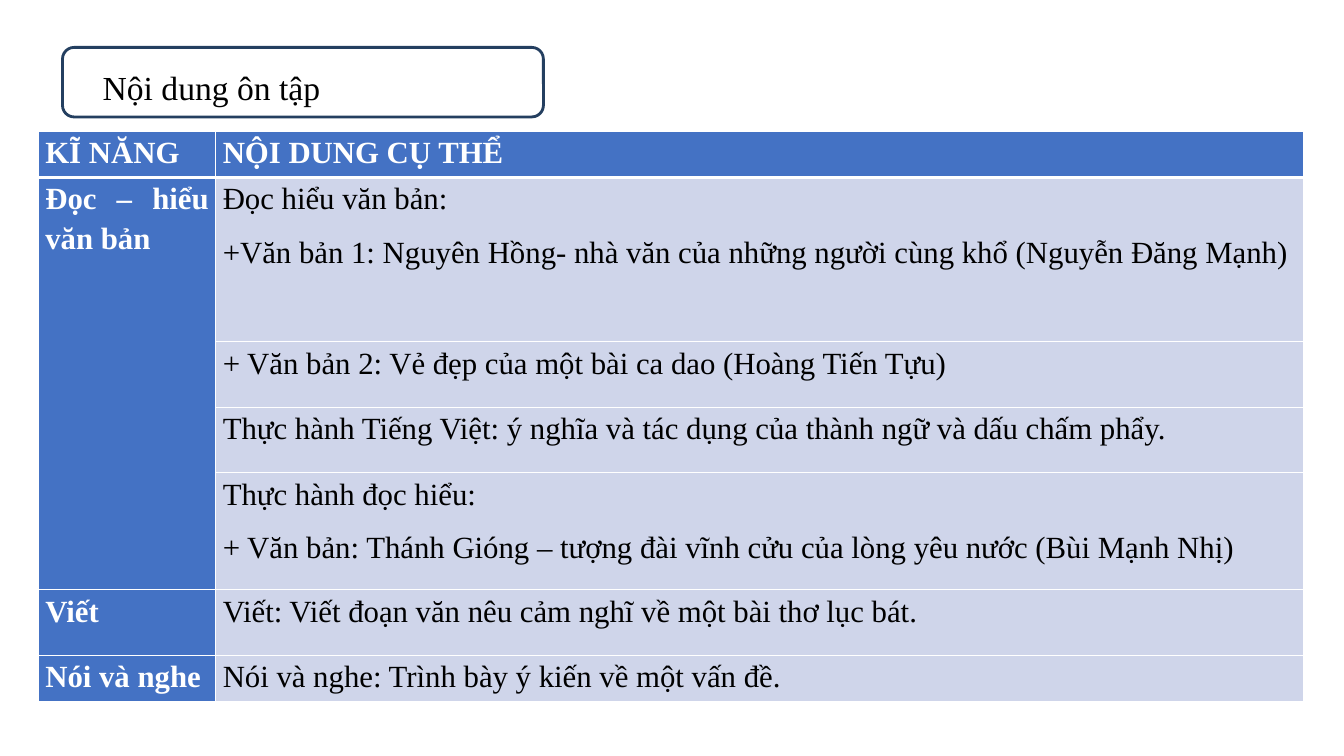
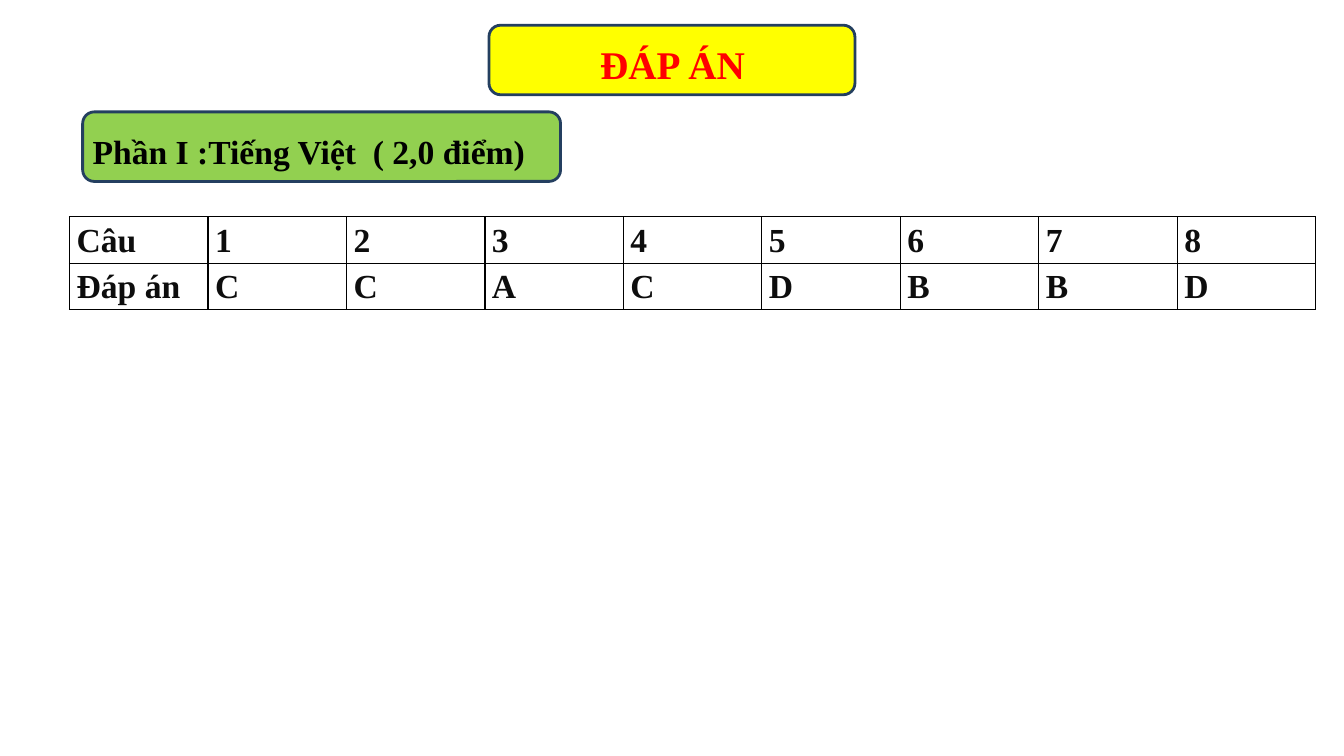
import pptx
import pptx.dml.color
import pptx.enum.shapes
import pptx.enum.text
import pptx.oxml
import pptx.oxml.ns
import pptx.util

Inches = pptx.util.Inches
ALIGN = pptx.enum.text.PP_ALIGN

FONT = "Times New Roman"
COLORS = {
    "black": "000000", "white": "FFFFFF", "ink": "0D0D0D", "red": "FF0000",
    "yellow": "FFFF00", "green": "92D050", "outline": "243F60",
    "blue": "4472C4", "pale": "CFD5EA",
}
SPACED = {"line_spacing": 1.15, "space_after": pptx.util.Pt(10)}
JUSTIFIED = {"alignment": ALIGN.JUSTIFY, **SPACED}
CENTERED = {"alignment": ALIGN.CENTER, **SPACED}
CELL = {
    "margin_left": Inches(0.07), "margin_right": Inches(0.07),
    "margin_top": 0, "margin_bottom": 0,
}

SKILLS = [
    ["KĨ NĂNG", "NỘI DUNG CỤ THỂ"],
    ["Đọc – hiểu văn bản",
     "Đọc hiểu văn bản:\n+Văn bản 1: Nguyên Hồng- nhà văn của những người cùng khổ "
     "(Nguyễn Đăng Mạnh)"],
    ["", "+ Văn bản 2: Vẻ đẹp của một bài ca dao (Hoàng Tiến Tựu)"],
    ["", "Thực hành Tiếng Việt: ý nghĩa và tác dụng của thành ngữ và dấu chấm phẩy."],
    ["", "Thực hành đọc hiểu:\n+ Văn bản: Thánh Gióng – tượng đài vĩnh cửu của lòng "
     "yêu nước (Bùi Mạnh Nhị)"],
    ["Viết", "Viết: Viết đoạn văn nêu cảm nghĩ về một bài thơ lục bát."],
    ["Nói và nghe", "Nói và nghe: Trình bày ý kiến về một vấn đề."],
]
SKILL_COLS = [1.76, 10.79]
SKILL_ROWS = [0.46, 1.63, 0.65, 0.65, 1.16, 0.65, 0.46]
ANSWERS = [["Câu", *"12345678"], ["Đáp án", *"CCACDBBD"]]


def rgb(name):
    return pptx.dml.color.RGBColor.from_string(COLORS[name])


def apply(obj, values):
    for name, value in values.items():
        setattr(obj, name, value)


def write(tf, text, size, color, bold=False, para=JUSTIFIED):
    """Fill a text frame, one paragraph per line of text."""
    for i, line in enumerate(text.split("\n")):
        p = tf.add_paragraph() if i else tf.paragraphs[0]
        apply(p, para)
        r = p.add_run()
        r.text = line
        apply(r.font, {"name": FONT, "size": pptx.util.Pt(size), "bold": bold})
        r.font.color.rgb = rgb(color)


def add_band(s, box, fill=None):
    sp = s.shapes.add_shape(pptx.enum.shapes.MSO_SHAPE.ROUNDED_RECTANGLE,
                            *map(Inches, box))
    sp.shadow.inherit = False
    if fill:
        sp.fill.solid()
        sp.fill.fore_color.rgb = rgb(fill)
    else:
        sp.fill.background()
    sp.line.color.rgb = rgb("outline")
    sp.line.width = pptx.util.Pt(2)


def add_label(s, box, text, size, color, bold=True, para=JUSTIFIED):
    tf = s.shapes.add_textbox(*map(Inches, box)).text_frame
    apply(tf, {"word_wrap": True,
               "auto_size": pptx.enum.text.MSO_AUTO_SIZE.SHAPE_TO_FIT_TEXT})
    write(tf, text, size, color, bold, para)


def set_borders(cell, color, top=1, bottom=1):
    """Draw all four sides; widths are in points."""
    tc_pr = cell._tc.get_or_add_tcPr()
    sides = {"L": 1, "R": 1, "T": top, "B": bottom}
    for i, (side, width) in enumerate(sides.items()):
        tc_pr.insert(i, pptx.oxml.parse_xml(
            f'<a:ln{side} {pptx.oxml.ns.nsdecls("a")} w="{pptx.util.Pt(width)}">'
            f'<a:solidFill><a:srgbClr val="{COLORS[color]}"/></a:solidFill>'
            f'</a:ln{side}>'))


def add_grid(s, left, top, cols, rows):
    table = s.shapes.add_table(len(rows), len(cols), Inches(left), Inches(top),
                               Inches(sum(cols)), Inches(sum(rows))).table
    apply(table, {"first_row": False, "horz_banding": False})
    for col, width in zip(table.columns, cols):
        col.width = Inches(width)
    for row, height in zip(table.rows, rows):
        row.height = Inches(height)
    return table


def fill_cell(cell, text, size, color, fill, bold):
    apply(cell, CELL)
    cell.fill.solid()
    cell.fill.fore_color.rgb = rgb(fill)
    if text:
        write(cell.text_frame, text, size, color, bold)


def add_skills_table(s):
    table = add_grid(s, 0.38, 1.3, SKILL_COLS, SKILL_ROWS)
    table.cell(1, 0).merge(table.cell(4, 0))
    for i, row in enumerate(SKILLS):
        for j, text in enumerate(row):
            cell = table.cell(i, j)
            heading = i == 0 or j == 0
            color, fill = ("white", "blue") if heading else ("black", "pale")
            fill_cell(cell, text, 22, color, fill, heading)
            set_borders(cell, "white", top=3 if i == 1 else 1,
                        bottom=3 if i == 0 else 1)


def add_answer_table(s):
    count = len(ANSWERS[0])
    table = add_grid(s, 0.69, 2.15, [12.36 / count] * count, [0.46] * len(ANSWERS))
    for i, row in enumerate(ANSWERS):
        for j, text in enumerate(row):
            cell = table.cell(i, j)
            fill_cell(cell, text, 24, "ink", "white", True)
            set_borders(cell, "black")


def review_slide(s):
    add_band(s, (0.62, 0.47, 4.77, 0.69))
    add_label(s, (0.92, 0.61, 6.66, 0.51), "Nội dung ôn tập", 24, "black",
              bold=False, para={})
    add_skills_table(s)


def answer_slide(s):
    add_band(s, (4.85, 0.25, 3.63, 0.69), "yellow")
    add_band(s, (0.82, 1.11, 4.74, 0.69), "green")
    add_label(s, (3.34, 0.28, 6.66, 0.6), "ĐÁP ÁN", 28, "red", para=CENTERED)
    add_label(s, (0.82, 1.19, 6.66, 0.53), "Phần I :Tiếng Việt  ( 2,0 điểm)",
              24, "black")
    add_answer_table(s)


def main():
    prs = pptx.Presentation()
    apply(prs, {"slide_width": Inches(13.33), "slide_height": Inches(7.5)})
    for build in (review_slide, answer_slide):
        build(prs.slides.add_slide(prs.slide_layouts[6]))
    prs.save("out.pptx")


if __name__ == "__main__":
    main()
